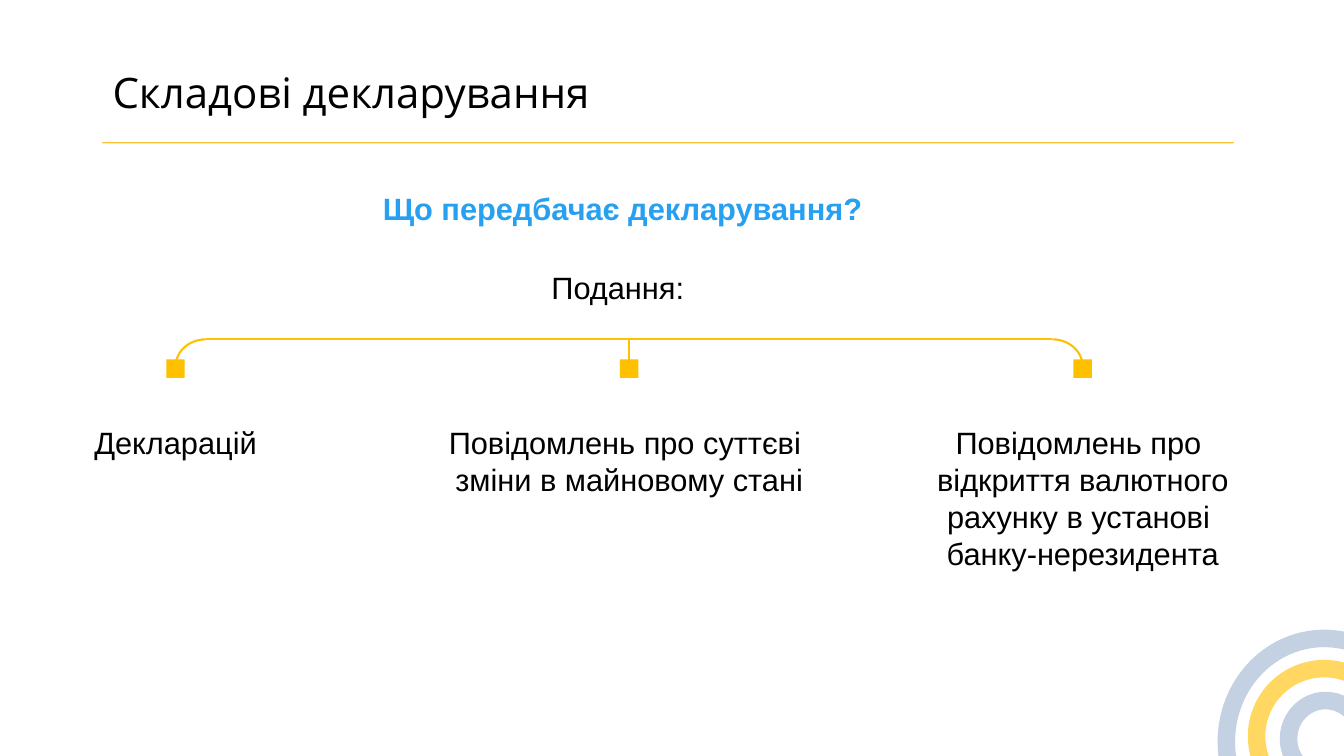
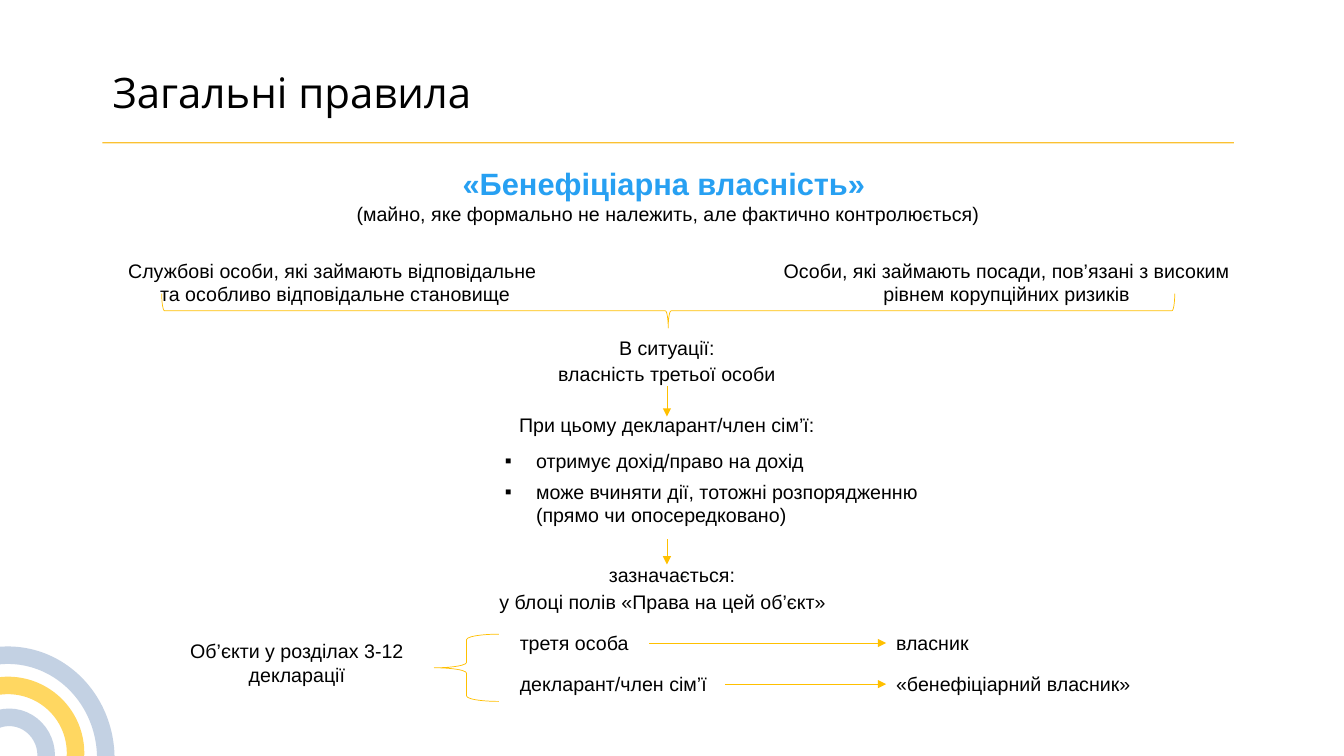
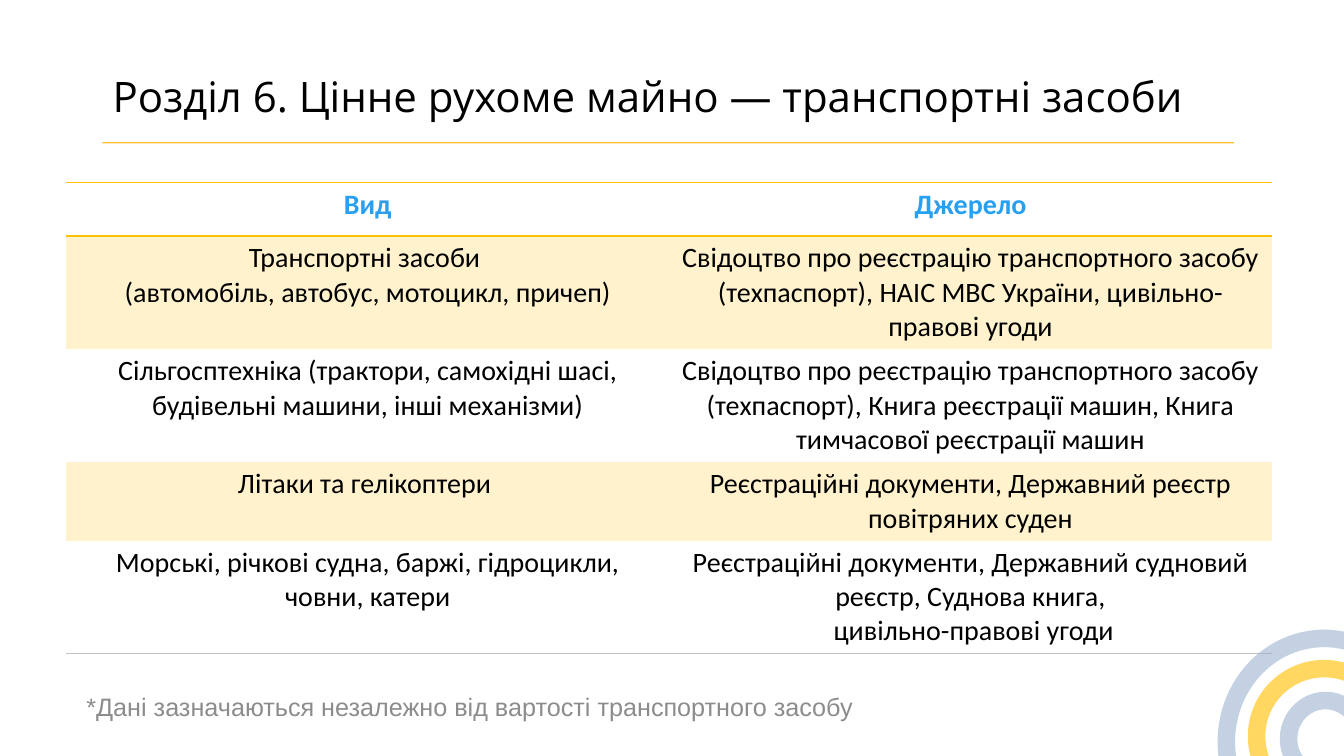
import dataclasses

import pptx
import pptx.dml.color
import pptx.enum.shapes
import pptx.enum.text
import pptx.oxml
import pptx.oxml.ns
import pptx.util
from lxml import etree

SHAPE = pptx.enum.shapes.MSO_SHAPE
ALIGN = pptx.enum.text.PP_ALIGN
ANCHOR = pptx.enum.text.MSO_ANCHOR
qn = pptx.oxml.ns.qn

TITLE_AND_BODY, TITLE_ONLY = 1, 5  # template layouts
TOP, LEFT, BOTTOM, RIGHT = range(4)  # connection sites of a rectangle


@dataclasses.dataclass(frozen=True)
class Theme:
    # Colours
    ink: str = "000000"
    accent: str = "27A0F2"
    gold: str = "FFC000"
    rule: str = "FBBB1C"
    ring: str = "9FB5D2"
    band: str = "FFF2CC"
    muted: str = "8C8C8C"
    table_end: str = "BFBFBF"
    # Fonts and type sizes
    title_font: str = "Open Sans"
    text_font: str = "Arial"
    table_font: str = "Calibri"
    title: float = 30
    large: float = 22
    table: float = 20
    note: float = 18
    small: float = 14
    # Line widths
    ring_width: float = 12.5
    bracket: float = 1.5
    border: float = 1
    thin: float = 0.5


THEME = Theme()


def color(value):
    return pptx.dml.color.RGBColor.from_string(value)


def cells(value):
    """Length of grid cells: the slide is 80 columns by 45 rows."""
    return pptx.util.Emu(round(value * pptx.util.Inches(1) / 6))


class Deck:
    def __init__(self):
        self.file = pptx.Presentation()
        self.file.slide_width = cells(80)
        self.file.slide_height = cells(45)
        self.page = None

    # Page frame: title, rule, corner rings
    def add_page(self, title, top=3.65, width=63, layout=TITLE_ONLY):
        self.page = self.file.slides.add_slide(self.file.slide_layouts[layout])
        box = self.place(self.page.shapes.title, 6.1, top, width, 3.65)
        self.set_text(box, [title], THEME.title, font=THEME.title_font,
                      align=ALIGN.LEFT, anchor=ANCHOR.MIDDLE)
        self.line((73.45, 8.5), (6.1, 8.5), THEME.border, THEME.rule, alpha=90)

    def rings(self, left=73, top=38):
        for inset, width, height, tint in (
            (0, 11.65, 12.3, THEME.ring),
            (1.8, 8.05, 8.05, THEME.gold),
            (3.7, 4.4, 4.55, THEME.ring),
        ):
            self.outline(SHAPE.OVAL, left + inset, top + inset, width, height,
                         THEME.ring_width, tint, alpha=62)

    # Text
    def place(self, box, left, top, width, height):
        box.left, box.top = cells(left), cells(top)
        box.width, box.height = cells(width), cells(height)
        return box

    def set_text(self, box, lines, size, tint=THEME.ink, bold=False,
                 font=THEME.text_font, align=ALIGN.CENTER, anchor=ANCHOR.TOP):
        frame = box.text_frame
        frame.word_wrap = True
        frame.auto_size = pptx.enum.text.MSO_AUTO_SIZE.NONE
        frame.vertical_anchor = anchor
        for index, line in enumerate(lines):
            para = frame.add_paragraph() if index else frame.paragraphs[0]
            para.text = line
            self.style(para, size, tint, bold, font, align)
        return frame.paragraphs

    def style(self, para, size, tint, bold, font, align):
        para.alignment = align
        para.font.size = pptx.util.Pt(size)
        para.font.name = font
        para.font.bold = bold
        para.font.color.rgb = color(tint)

    def text(self, left, top, width, height, lines, size=THEME.small, **style):
        box = self.page.shapes.add_textbox(
            cells(left), cells(top), cells(width), cells(height))
        self.set_text(box, lines, size, **style)
        return box

    def bullets(self, left, top, width, height, lines):
        box = self.place(self.page.placeholders[1], left, top, width, height)
        indent = pptx.util.Inches(0.31)
        for para in self.set_text(box, lines, THEME.small, align=ALIGN.LEFT):
            para.space_before = pptx.util.Pt(0)
            para.space_after = pptx.util.Pt(5.5)
            props = para._p.get_or_add_pPr()
            props.set("marL", str(indent))
            props.set("indent", str(-indent))
            mark = pptx.oxml.parse_xml(
                f'<a:buChar {pptx.oxml.ns.nsdecls("a")} char="▪"/>')
            props.find(qn("a:defRPr")).addprevious(mark)

    # Shapes and lines
    def stroke(self, item, width, tint, alpha=None):
        item.line.width = pptx.util.Pt(width)
        item.line.color.rgb = color(tint)
        if alpha:
            fill = item.line._ln.find(qn("a:solidFill"))
            etree.SubElement(fill[0], qn("a:alpha"), val=str(alpha * 1000))

    def shape(self, kind, left, top, width, height):
        item = self.page.shapes.add_shape(
            kind, cells(left), cells(top), cells(width), cells(height))
        item.shadow.inherit = False
        return item

    def outline(self, kind, left, top, width, height, weight,
                tint=THEME.gold, alpha=None):
        item = self.shape(kind, left, top, width, height)
        item.fill.background()
        self.stroke(item, weight, tint, alpha)
        return item

    def square(self, center, top, side):
        item = self.shape(SHAPE.RECTANGLE, center - side / 2, top, side, side)
        item.fill.solid()
        item.fill.fore_color.rgb = color(THEME.gold)
        item.line.fill.background()
        return item

    def line(self, start, end, weight, tint=THEME.gold, alpha=None, arrow=False):
        item = self.page.shapes.add_connector(
            pptx.enum.shapes.MSO_CONNECTOR.STRAIGHT,
            *(cells(value) for value in (*start, *end)))
        self.stroke(item, weight, tint, alpha)
        if arrow:
            etree.SubElement(item.line._ln, qn("a:tailEnd"), type="triangle")
        etree.SubElement(item.element.spPr, qn("a:effectLst"))
        return item

    # Table
    def table(self, left, top, widths, heights, rows):
        frame = self.page.shapes.add_table(
            len(rows), len(widths), cells(left), cells(top),
            cells(sum(widths)), cells(sum(heights)))
        grid = frame.table
        grid.first_row = grid.horz_banding = False
        style = next(frame.element.iter(qn("a:tableStyleId")))
        style.text = "{2D5ABB26-0587-4C30-8999-92F81FD0307C}"  # no style, no grid
        for column, width in zip(grid.columns, widths):
            column.width = cells(width)
        for number, (row, height) in enumerate(zip(grid.rows, heights)):
            row.height = cells(height)
            for cell, lines in zip(row.cells, rows[number]):
                self.fill_cell(cell, lines, number, number == len(rows) - 1)

    def fill_cell(self, cell, lines, number, last):
        header = number == 0
        if header:
            self.border(cell, "a:lnT", THEME.gold, THEME.border)
            self.border(cell, "a:lnB", THEME.gold, THEME.border)
        if last:
            self.border(cell, "a:lnB", THEME.table_end, THEME.thin)
        if number % 2:
            cell.fill.solid()
            cell.fill.fore_color.rgb = color(THEME.band)
        else:
            cell.fill.background()
        cell.text = "\n".join(lines)
        for para in cell.text_frame.paragraphs:
            self.style(para, THEME.table, THEME.accent if header else THEME.ink,
                       header, THEME.table_font, ALIGN.CENTER)

    def border(self, cell, side, tint, weight):
        edge = etree.SubElement(cell._tc.get_or_add_tcPr(), qn(side),
                                w=str(pptx.util.Pt(weight)))
        fill = etree.SubElement(edge, qn("a:solidFill"))
        etree.SubElement(fill, qn("a:srgbClr"), val=tint)


def components_page(deck):
    deck.add_page("Складові декларування")
    deck.text(22.2, 11, 30.1, 2.8, ["Що передбачає декларування?"], THEME.large,
              tint=THEME.accent, bold=True, align=ALIGN.LEFT)
    deck.text(22.4, 15.7, 28.75, 2.8, ["Подання:"], THEME.large)

    # Three branches at equal steps
    branches = (
        (16.4, ["Декларацій"]),
        (23, ["Повідомлень про суттєві ", "зміни в майновому стані"]),
        (26, ["Повідомлень про \nвідкриття валютного\n"
              "рахунку в установі \nбанку-нерезидента"]),
    )
    first, step, bar = 10.45, 27, 20.2
    squares = []
    for index, (width, lines) in enumerate(branches):
        center = first + step * index
        deck.text(center - width / 2, 24.95, width, 9.5, lines, THEME.large)
        squares.append(deck.square(center, 21.4, 1.1))

    # Bracket with rounded ends
    last, arc = first + 2 * step, 3.6
    deck.line((first + arc / 2, bar), (last - arc / 2, bar), THEME.bracket)
    for left, start, end in ((first, 108, 162), (last - arc, 162, 0)):
        corner = deck.outline(SHAPE.ARC, left, bar, arc, 3.25, THEME.bracket)
        corner.adjustments[0], corner.adjustments[1] = start, end
    middle = first + step
    stem = deck.line((middle, 21.4), (middle, bar), THEME.bracket)
    stem.begin_connect(squares[1], TOP)
    deck.rings()


def rules_page(deck):
    deck.add_page("Загальні правила", layout=TITLE_AND_BODY)
    heading = deck.text(20.15, 9.5, 39.25, 4.25, [
        "«Бенефіціарна власність» ",
        "(майно, яке формально не належить, але фактично контролюється)"])
    lead = heading.text_frame.paragraphs[0]
    deck.style(lead, THEME.large, THEME.accent, True, THEME.text_font, ALIGN.CENTER)

    # Two groups of people joined by a brace
    deck.text(6.3, 15.1, 27.3, 3.4, [
        "Службові особи, які займають відповідальне \n"
        "та особливо відповідальне становище"])
    deck.text(44.45, 15.1, 30.95, 3.4, [
        "Особи, які займають посади, пов’язані з високим рівнем корупційних ризиків"])
    brace = deck.outline(SHAPE.LEFT_BRACE, 38.75, -11.65, 2.05, 60.3, THEME.thin)
    brace.rotation = 270

    # Central chain of conditions
    for center, top, width, line in (
        (39.7, 19.7, 7.15, "В ситуації:"),
        (39.7, 21.25, 16.25, "власність третьої особи"),
        (39.7, 24.3, 19.3, "При цьому декларант/член сім’ї:"),
        (40, 33.2, 16.25, "зазначається:"),
        (39.45, 34.85, 22.6, "у блоці полів «Права на цей об’єкт»"),
    ):
        deck.text(center - width / 2, top, width, 2.05, [line])
    deck.bullets(29.45, 26.4, 28, 5.2, [
        "отримує дохід/право на дохід",
        "може вчиняти дії, тотожні розпорядженню (прямо чи опосередковано)"])
    for start, end in ((23, 24.8), (32.1, 33.6)):
        deck.line((39.7, start), (39.7, end), THEME.thin, arrow=True)

    # Roles and the fields they fill
    deck.text(8.65, 37.75, 18.05, 3.4, ["Об’єкти у розділах 3-12 декларації"])
    deck.outline(SHAPE.LEFT_BRACE, 25.85, 37.75, 3.85, 4, THEME.thin)
    for top, width, person, role in (
        (37.25, 8.3, "третя особа", "власник"),
        (39.7, 12.8, "декларант/член сім’ї", "«бенефіціарний власник»"),
    ):
        source = deck.text(30.35, top, width, 2.05, [person], align=ALIGN.LEFT)
        target = deck.text(52.75, top, 18, 2.05, [role], align=ALIGN.LEFT)
        arrow = deck.line((30.35 + width, top), (52.75, top), THEME.thin, arrow=True)
        arrow.begin_connect(source, RIGHT)
        arrow.end_connect(target, LEFT)
    deck.rings(-5.35, 39)


def vehicles_page(deck):
    deck.add_page("Розділ 6. Цінне рухоме майно — транспортні засоби", 3.85, 70.85)
    deck.table(3.95, 10.85, [35.88, 35.88], [3.2, 6.65, 6.65, 4.55, 6.65], [
        (["Вид"], ["Джерело"]),
        (["Транспортні засоби ", "(автомобіль, автобус, мотоцикл, причеп)"],
         ["Свідоцтво про реєстрацію транспортного засобу (техпаспорт), "
          "НАІС МВС України, цивільно-правові угоди"]),
        (["Сільгосптехніка (трактори, самохідні шасі, будівельні машини, "
          "інші механізми)"],
         ["Свідоцтво про реєстрацію транспортного засобу (техпаспорт), "
          "Книга реєстрації машин, Книга тимчасової реєстрації машин"]),
        (["Літаки та гелікоптери "],
         ["Реєстраційні документи, Державний реєстр повітряних суден"]),
        (["Морські, річкові судна, баржі, гідроцикли, човни, катери"],
         ["Реєстраційні документи, Державний судновий реєстр, Суднова книга,",
          " цивільно-правові угоди"]),
    ])
    deck.text(4.55, 41.05, 67.85, 2.05,
              ["*Дані зазначаються незалежно від вартості транспортного засобу"],
              THEME.note, tint=THEME.muted, align=ALIGN.LEFT, anchor=ANCHOR.MIDDLE)
    deck.rings()


def main():
    deck = Deck()
    components_page(deck)
    rules_page(deck)
    vehicles_page(deck)
    deck.file.save("out.pptx")


if __name__ == "__main__":
    main()
